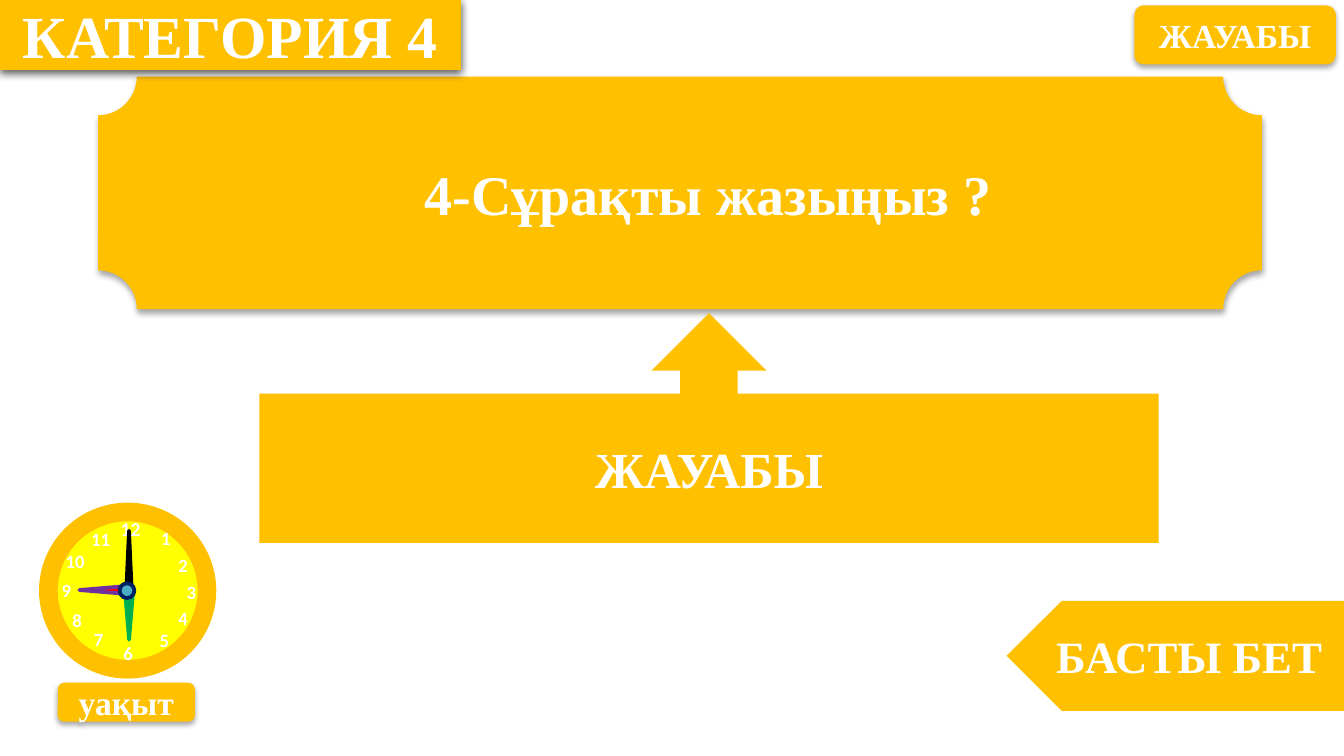
from dataclasses import dataclass

from lxml.etree import SubElement
from pptx import Presentation
from pptx.dml.color import RGBColor
from pptx.enum.shapes import MSO_SHAPE as Preset
from pptx.enum.text import MSO_ANCHOR as Anchor, MSO_AUTO_SIZE as AutoSize, PP_ALIGN as Align
from pptx.oxml.ns import qn
from pptx.util import Inches, Pt


@dataclass(frozen=True)
class Theme:
    gold: str = "FFC000"
    white: str = "FFFFFF"
    black: str = "000000"
    dial: str = "FFFF00"
    red: str = "FF0000"
    purple: str = "7030A0"
    green: str = "00B050"
    hub: str = "4BACC6"
    navy: str = "002060"
    heading_font: str = "Times New Roman"
    numeral_font: str = "Calibri"
    title_size: float = 32
    question_size: float = 30
    answer_size: float = 27
    home_size: float = 24
    button_size: float = 18
    numeral_size: float = 10
    noon_size: float = 10.5


THEME = Theme()
SOFT_SHADOW = (35, 3.1, 1.8)
STRONG_SHADOW = (63, 4.5, 1.5)
WIDE_INSETS = (0.1, 0.05, 0.1, 0.05)
NARROW_INSETS = (0.07, 0.04, 0.07, 0.04)
INDENTED_INSETS = (0.49, 0.04, 0.07, 0.04)

NUMERALS = [
    ("1", 1.1, 3.87), ("2", 1.23, 4.07), ("3", 1.29, 4.27),
    ("4", 1.23, 4.47), ("5", 1.09, 4.63), ("6", 0.82, 4.73),
    ("7", 0.6, 4.62), ("8", 0.44, 4.48), ("9", 0.36, 4.26),
    ("10", 0.39, 4.04), ("11", 0.58, 3.88),
]


def color(value):
    return RGBColor.from_string(value)


def paint(shape, fill, line=None, line_width=2):
    shape.fill.solid()
    shape.fill.fore_color.rgb = color(fill)
    if line:
        shape.line.color.rgb = color(line)
        shape.line.width = Pt(line_width)
    else:
        shape.line.fill.background()
    shape.shadow.inherit = False


def add_shadow(shape, opacity, blur, distance):
    effects = shape._element.spPr.find(qn("a:effectLst"))
    outer = SubElement(effects, qn("a:outerShdw"), blurRad=str(Pt(blur)),
                       dist=str(Pt(distance)), dir="5400000", rotWithShape="0")
    tint = SubElement(outer, qn("a:srgbClr"), val=THEME.black)
    SubElement(tint, qn("a:alpha"), val=str(opacity * 1000))


def set_font(paragraph, name, size):
    font = paragraph.font
    font.name = name
    font.size = Pt(size)
    font.bold = True
    font.color.rgb = color(THEME.white)


def write_label(shape, text, size, insets=WIDE_INSETS):
    frame = shape.text_frame
    frame.auto_size = AutoSize.NONE
    frame.word_wrap = True
    frame.vertical_anchor = Anchor.MIDDLE
    (frame.margin_left, frame.margin_top,
     frame.margin_right, frame.margin_bottom) = map(Inches, insets)
    frame.text = text
    paragraph = frame.paragraphs[0]
    paragraph.alignment = Align.CENTER
    set_font(paragraph, THEME.heading_font, size)


def add_figure(slide, preset, box, fill, line=None, line_width=2):
    shape = slide.shapes.add_shape(preset, *map(Inches, box))
    paint(shape, fill, line, line_width)
    return shape


def add_panel(slide, preset, box, text, size, insets=WIDE_INSETS, shadow=None):
    shape = add_figure(slide, preset, box, THEME.gold)
    if shadow:
        add_shadow(shape, *shadow)
    write_label(shape, text, size, insets)
    return shape


def place_title(slide, box, text):
    title = slide.shapes.title
    title.left, title.top, title.width, title.height = map(Inches, box)
    geometry = SubElement(title._element.spPr, qn("a:prstGeom"), prst="roundRect")
    SubElement(geometry, qn("a:avLst"))
    paint(title, THEME.gold)
    add_shadow(title, *STRONG_SHADOW)
    write_label(title, text, THEME.title_size)
    slide.shapes._spTree.append(title._element)


def add_numeral(slide, box, text, size):
    frame = slide.shapes.add_textbox(*map(Inches, box)).text_frame
    frame.word_wrap = False
    frame.auto_size = AutoSize.SHAPE_TO_FIT_TEXT
    frame.text = text
    set_font(frame.paragraphs[0], THEME.numeral_font, size)


def add_tapered_hand(slide, box, rotation, fill, line):
    hand = add_figure(slide, Preset.TRAPEZOID, box, fill, line)
    hand.adjustments[0] = 0.5
    hand.rotation = rotation


def add_clock(slide):
    add_figure(slide, Preset.OVAL, (0.36, 3.81, 1.18, 1.17), THEME.dial, THEME.gold, 10)
    add_numeral(slide, (0.8, 3.8, 0.36, 0.29), "12", THEME.noon_size)
    for text, left, top in NUMERALS:
        width = 0.27 if len(text) == 1 else 0.35
        add_numeral(slide, (left, top, width, 0.27), text, THEME.numeral_size)
    add_figure(slide, Preset.ISOSCELES_TRIANGLE, (0.94, 3.95, 0.04, 0.44),
               THEME.black, THEME.black)
    add_tapered_hand(slide, (0.74, 4.21, 0.06, 0.36), 270, THEME.red, THEME.purple)
    add_tapered_hand(slide, (0.93, 4.4, 0.06, 0.36), 180, THEME.green, THEME.green)
    add_figure(slide, Preset.OVAL, (0.89, 4.34, 0.11, 0.11), THEME.hub, THEME.navy)


def main():
    presentation = Presentation()
    presentation.slide_width = Inches(10)
    presentation.slide_height = Inches(10 * 9 / 16)
    slide = presentation.slides.add_slide(presentation.slide_layouts[5])

    add_panel(slide, Preset.PLAQUE, (0.73, 0.57, 8.66, 1.73), "4-Сұрақты жазыңыз ?",
              THEME.question_size, INDENTED_INSETS, SOFT_SHADOW)
    add_panel(slide, Preset.UP_ARROW_CALLOUT, (1.93, 2.33, 6.69, 1.71), "ЖАУАБЫ",
              THEME.answer_size, NARROW_INSETS)
    add_panel(slide, Preset.ROUNDED_RECTANGLE, (8.44, 0.04, 1.5, 0.44), "ЖАУАБЫ",
              THEME.button_size, shadow=SOFT_SHADOW)
    place_title(slide, (0, -0.01, 3.43, 0.53), "КАТЕГОРИЯ 4")
    add_clock(slide)
    add_panel(slide, Preset.ROUNDED_RECTANGLE, (0.43, 5.08, 1.02, 0.29), "уақыт",
              THEME.button_size, shadow=SOFT_SHADOW)
    home = add_panel(slide, Preset.PENTAGON, (7.49, 4.47, 2.51, 0.82), "БАСТЫ БЕТ",
                     THEME.home_size, NARROW_INSETS)
    home._element.spPr.find(qn("a:xfrm")).set("flipH", "1")

    presentation.save("out.pptx")


if __name__ == "__main__":
    main()
